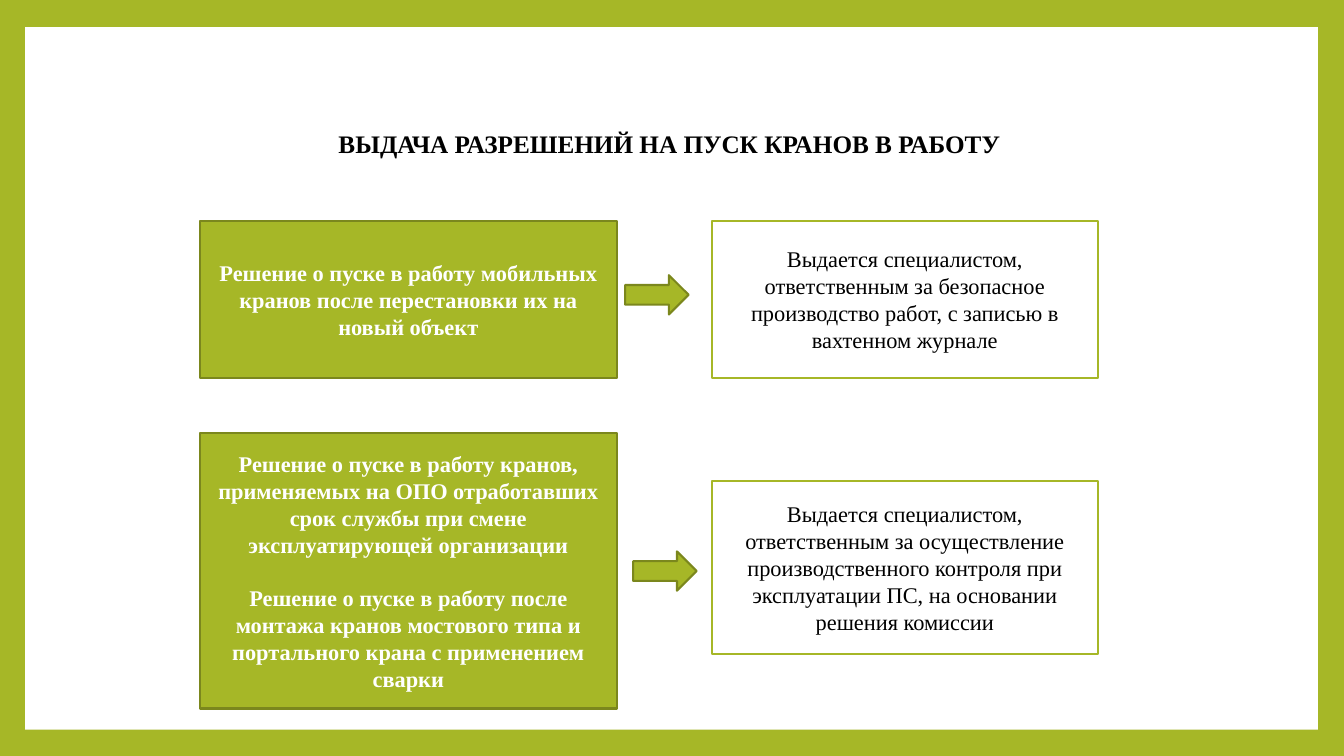
from pptx import Presentation
from pptx.dml.color import RGBColor
from pptx.enum.shapes import MSO_SHAPE
from pptx.enum.text import MSO_ANCHOR, PP_ALIGN
from pptx.util import Inches, Pt

COLORS = {
    "green": "A6B727",
    "dark green": "7B871D",
    "white": "FFFFFF",
    "black": "000000",
}
FONT = "Times New Roman"


def add_block(shape_type, box, fill, line=None):
    """Add a filled shape at box (left, top, width, height in inches)."""
    shape = slide.shapes.add_shape(shape_type, *[Inches(value) for value in box])
    shape.shadow.inherit = False
    shape.fill.solid()
    shape.fill.fore_color.rgb = RGBColor.from_string(COLORS[fill])
    if line:
        shape.line.color.rgb = RGBColor.from_string(COLORS[line])
        shape.line.width = Pt(1.5)
    else:
        shape.line.fill.background()
    return shape


def write(paragraph, text, size, color, bold):
    paragraph.alignment = PP_ALIGN.CENTER
    run = paragraph.add_run()
    run.text = text
    run.font.name = FONT
    run.font.size = Pt(size)
    run.font.bold = bold
    run.font.color.rgb = RGBColor.from_string(COLORS[color])


presentation = Presentation()
presentation.slide_width = Inches(13.33)
presentation.slide_height = Inches(7.5)
slide = presentation.slides.add_slide(presentation.slide_layouts[5])
slide.background.fill.solid()
slide.background.fill.fore_color.rgb = RGBColor.from_string(COLORS["green"])

# White page inside the green frame, kept behind the title
page = add_block(MSO_SHAPE.RECTANGLE, (0.25, 0.27, 12.82, 6.97), "white")
title = slide.shapes.title
title.element.addprevious(page.element)

title.left, title.top = Inches(2.14), Inches(1.09)
title.width, title.height = Inches(9), Inches(0.7)
title.text_frame.vertical_anchor = MSO_ANCHOR.MIDDLE
title.text_frame.word_wrap = True
heading = title.text_frame.paragraphs[0]
heading.line_spacing = 0.9
write(heading, "ВЫДАЧА РАЗРЕШЕНИЙ НА ПУСК КРАНОВ В РАБОТУ", 18, "black", True)

# Decisions on the left, who issues them on the right
decision_style = ("green", "dark green", "white", True)
issuer_style = ("white", "green", "black", False)
cards = [
    ((1.98, 2.19, 4.14, 1.56), decision_style, [
        "Решение о пуске в работу мобильных кранов после перестановки их на новый объект",
    ]),
    ((7.06, 2.19, 3.83, 1.56), issuer_style, [
        "Выдается специалистом, ответственным за безопасное производство работ, "
        "с записью в вахтенном журнале",
    ]),
    ((1.98, 4.3, 4.14, 2.73), decision_style, [
        "Решение о пуске в работу кранов, применяемых на ОПО отработавших "
        "срок службы при смене эксплуатирующей организации",
        "Решение о пуске в работу после монтажа кранов мостового типа "
        "и портального крана с применением сварки",
    ]),
    ((7.06, 4.77, 3.83, 1.72), issuer_style, [
        "Выдается специалистом, ответственным за осуществление производственного "
        "контроля при эксплуатации ПС, на основании решения комиссии",
    ]),
]
for box, (fill, line, color, bold), texts in cards:
    card = add_block(MSO_SHAPE.RECTANGLE, box, fill, line)
    frame = card.text_frame
    frame.word_wrap = True
    frame.vertical_anchor = MSO_ANCHOR.MIDDLE
    for index, text in enumerate(texts):
        paragraph = frame.add_paragraph() if index else frame.paragraphs[0]
        if index:
            paragraph.space_before = Pt(19)
        write(paragraph, text, 16, color, bold)

for left, top in [(6.2, 2.73), (6.28, 5.47)]:
    add_block(MSO_SHAPE.RIGHT_ARROW, (left, top, 0.63, 0.39), "green", "dark green")

presentation.save("out.pptx")
